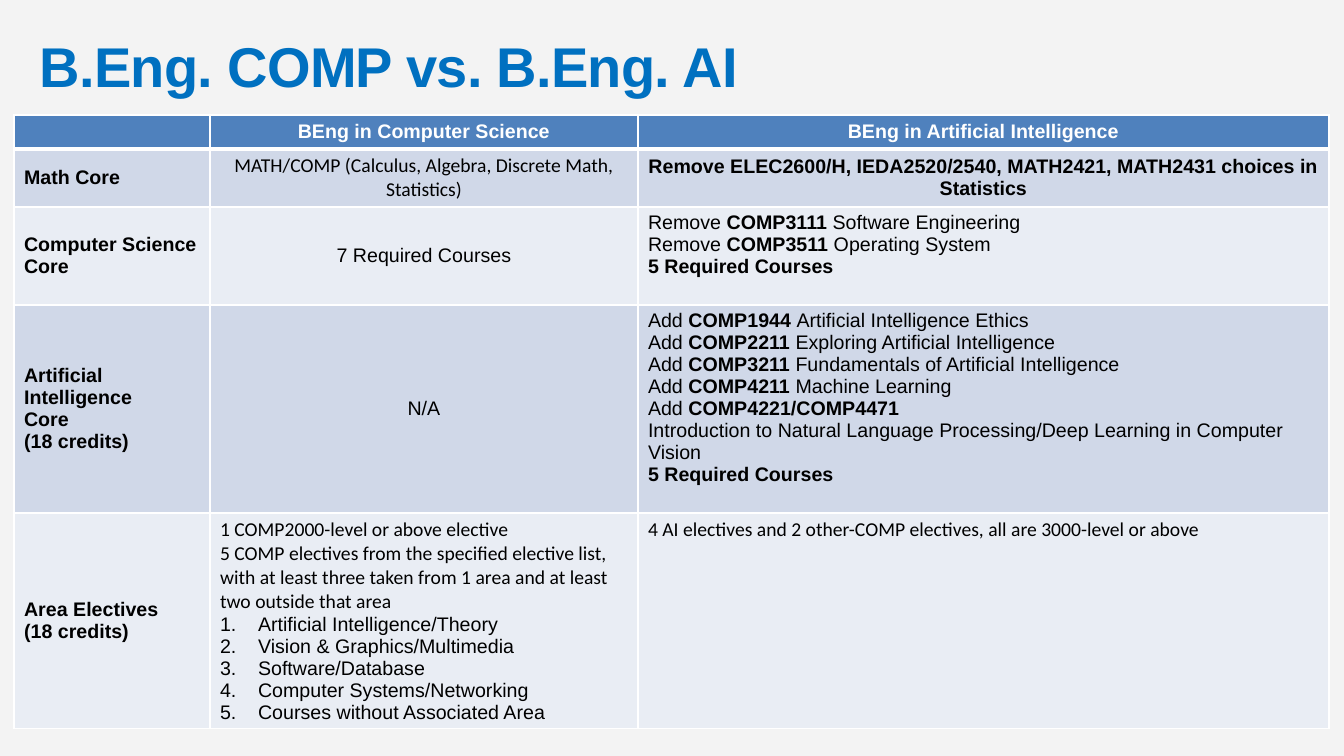
from lxml.etree import SubElement
from pptx import Presentation
from pptx.dml.color import RGBColor
from pptx.enum.text import MSO_ANCHOR as Anchor, PP_ALIGN as Align
from pptx.oxml.ns import qn
from pptx.util import Emu, Pt

PX = 914400 / 100.8
COLORS = {"bg": "F3F3F3", "title": "0070C0", "header": "4F81BD", "odd": "D0D8E8",
          "even": "E9EDF4", "white": "FFFFFF", "text": "000000"}

TITLE = "B.Eng. COMP vs. B.Eng. AI"
TITLE_BOX = (30, 23, 1204, 82)
TABLE_AT = (14, 115)
COL_WIDTHS = [196, 428, 691]
ROW_HEIGHTS = [32, 58, 98, 208, 216]


def cell_text(*lines, font="Arial", align=Align.LEFT, anchor=Anchor.MIDDLE, numbered=()):
    """Lines of one cell; the parts between asterisks are bold."""
    return {"lines": lines, "font": font, "align": align, "anchor": anchor, "numbered": numbered}


ROWS = [
    [cell_text(),
     cell_text("*BEng in Computer Science*", align=Align.CENTER),
     cell_text("*BEng in Artificial Intelligence*", align=Align.CENTER)],
    [cell_text("*Math Core*"),
     cell_text("MATH/COMP (Calculus, Algebra, Discrete Math, Statistics)",
               font="Calibri", align=Align.CENTER),
     cell_text("*Remove ELEC2600/H, IEDA2520/2540, MATH2421, MATH2431 choices in Statistics*",
               align=Align.CENTER)],
    [cell_text("*Computer Science Core*"),
     cell_text("7 Required Courses", align=Align.CENTER),
     cell_text("Remove *COMP3111 *Software Engineering",
               "Remove *COMP3511 *Operating System",
               "*5 Required Courses*", anchor=Anchor.TOP)],
    [cell_text("*Artificial Intelligence*", "*Core*", "*(18 credits)*"),
     cell_text("N/A", align=Align.CENTER),
     cell_text("Add *COMP1944 *Artificial Intelligence Ethics",
               "Add *COMP2211 *Exploring Artificial Intelligence",
               "Add *COMP3211 *Fundamentals of Artificial Intelligence",
               "Add *COMP4211 *Machine Learning",
               "Add *COMP4221/COMP4471*",
               "Introduction to Natural Language Processing/Deep Learning in Computer Vision",
               "*5 Required Courses*", anchor=Anchor.TOP)],
    [cell_text("*Area Electives*", "*(18 credits)*"),
     cell_text("1 COMP2000-level or above elective",
               "5 COMP electives from the specified elective list, with at least three "
               "taken from 1 area and at least two outside that area",
               font="Calibri",
               numbered=("Artificial Intelligence/Theory", "Vision & Graphics/Multimedia",
                         "Software/Database", "Computer Systems/Networking",
                         "Courses without Associated Area")),
     cell_text("4 AI electives and 2 other-COMP electives, all are 3000-level or above",
               font="Calibri", anchor=Anchor.TOP)],
]


def px(n):
    return Emu(round(n * PX))


def rgb(name):
    return RGBColor.from_string(COLORS[name])


def add_run(p, text, font, size, color, bold):
    r = p.add_run()
    r.text = text
    r.font.name, r.font.size, r.font.bold = font, Pt(size), bold
    r.font.color.rgb = rgb(color)
    return r


def add_number(p):
    pPr = p._p.get_or_add_pPr()
    indent = px(38)
    pPr.set("marL", str(indent))
    pPr.set("indent", str(-indent))
    SubElement(pPr, qn("a:buFont"), typeface="+mj-lt")
    SubElement(pPr, qn("a:buAutoNum"), type="arabicPeriod")


def set_borders(cell, bottom):
    tcPr = cell._tc.get_or_add_tcPr()
    for side, width in (("L", 1), ("R", 1), ("T", 1), ("B", bottom)):
        ln = SubElement(tcPr, qn(f"a:ln{side}"), w=str(Pt(width)))
        fill = SubElement(ln, qn("a:solidFill"))
        SubElement(fill, qn("a:srgbClr"), val=COLORS["white"])


def fill_cell(cell, content, fill, color, bottom):
    set_borders(cell, bottom)
    cell.fill.solid()
    cell.fill.fore_color.rgb = rgb(fill)
    cell.vertical_anchor = content["anchor"]
    tf = cell.text_frame
    paragraphs = [(t, content["font"], False) for t in content["lines"]]
    paragraphs += [(t, "Arial", True) for t in content["numbered"]]
    if not paragraphs:
        SubElement(tf.paragraphs[0]._p, qn("a:endParaRPr"), sz="1400")
    for i, (text, font, numbered) in enumerate(paragraphs):
        p = tf.add_paragraph() if i else tf.paragraphs[0]
        p.alignment = content["align"]
        if numbered:
            add_number(p)
        for j, part in enumerate(text.split("*")):
            if part:
                add_run(p, part, font, 14, color, j % 2 == 1)


def add_title(s):
    tf = s.shapes.add_textbox(*map(px, TITLE_BOX)).text_frame
    tf.word_wrap = True
    tf.vertical_anchor = Anchor.BOTTOM
    p = tf.paragraphs[0]
    p.line_spacing = 0.9
    r = add_run(p, TITLE, "Arial", 40, "title", True)
    r.font._element.set("spc", "-50")


def add_comparison(s):
    table = s.shapes.add_table(len(ROWS), len(COL_WIDTHS), *map(px, TABLE_AT),
                               px(sum(COL_WIDTHS)), px(sum(ROW_HEIGHTS))).table
    for col, width in zip(table.columns, COL_WIDTHS):
        col.width = px(width)
    for i, (height, row) in enumerate(zip(ROW_HEIGHTS, ROWS)):
        table.rows[i].height = px(height)
        fill = "header" if i == 0 else "odd" if i % 2 else "even"
        color, bottom = ("white", 3) if i == 0 else ("text", 1)
        for j, content in enumerate(row):
            fill_cell(table.cell(i, j), content, fill, color, bottom)


def main():
    prs = Presentation()
    prs.slide_width, prs.slide_height = px(1344), px(756)
    s = prs.slides.add_slide(prs.slide_layouts[6])
    s.background.fill.solid()
    s.background.fill.fore_color.rgb = rgb("bg")
    add_comparison(s)
    add_title(s)
    prs.save("out.pptx")


if __name__ == "__main__":
    main()
